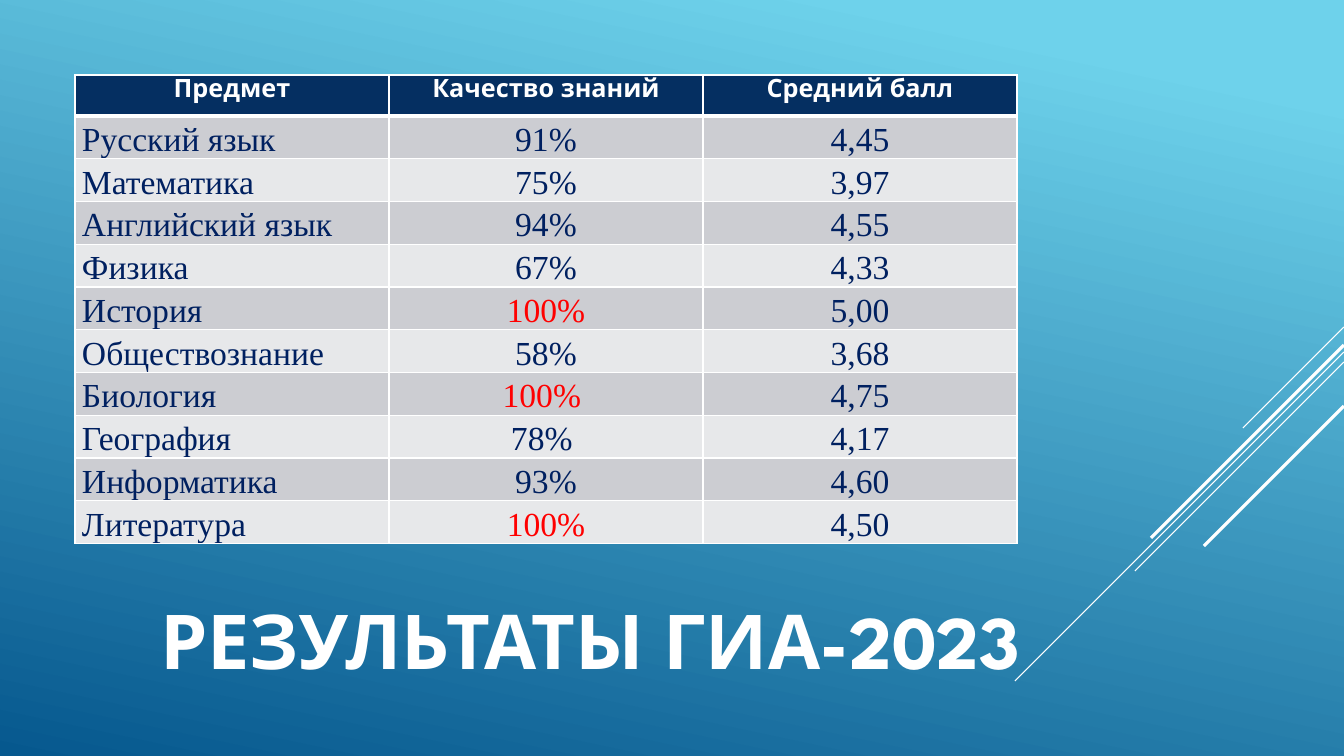
"""Builds the exam results slide: a table of subjects above a large title."""
from dataclasses import dataclass

from lxml import etree
from pptx import Presentation
from pptx.dml.color import RGBColor
from pptx.enum.shapes import MSO_CONNECTOR
from pptx.enum.text import MSO_ANCHOR, MSO_AUTO_SIZE, PP_ALIGN
from pptx.oxml.ns import qn
from pptx.util import Emu, Pt

STRAIGHT = MSO_CONNECTOR.STRAIGHT
MIDDLE = MSO_ANCHOR.MIDDLE
NO_FIT = MSO_AUTO_SIZE.NONE
LEFT, CENTER, JUSTIFY = PP_ALIGN.LEFT, PP_ALIGN.CENTER, PP_ALIGN.JUSTIFY

TITLE = "РЕЗУЛЬТАТЫ ГИА-2023"
HEADINGS = ("Предмет", "Качество знаний", "Средний балл")
RESULTS = [
    ("Русский язык", "91%", "4,45"),
    ("Математика", "75%", "3,97"),
    ("Английский язык", "94%", "4,55"),
    ("Физика", "67%", "4,33"),
    ("История", "100%", "5,00"),
    ("Обществознание", "58%", "3,68"),
    ("Биология", "100% ", "4,75"),
    ("География", "78% ", "4,17"),
    ("Информатика", "93%", "4,60"),
    ("Литература", "100%", "4,50"),
]

SLIDE_SIZE = (1344, 756)
TITLE_BOX = (150, 550, 883, 178)
TABLE_ORIGIN = (75, 75)
COLUMN_WIDTH, ROW_HEIGHT = 314, 41
CELL_INSET = 7
# Each diagonal: height at the right edge, horizontal run, line width.
DIAGONALS = [(327, 101, 0.75), (352, 329, 0.75), (362, 209, 0.75),
             (345, 193, 2.25), (406, 140, 2.25)]


@dataclass(frozen=True)
class Theme:
    white: str = "FFFFFF"
    sky: str = "6ED2EB"
    deep: str = "06588E"
    header: str = "052F61"
    bands: tuple = ("CCCDD2", "E7E8EA")
    ink: str = "002060"
    top_mark: str = "FF0000"
    display_font: str = "League Spartan"
    body_font: str = "Times New Roman"
    title_size: int = 54
    header_size: int = 18
    body_size: int = 24


THEME = Theme()


def px(length):
    return Emu(round(length * 12192000 / SLIDE_SIZE[0]))


def rgb(color):
    return RGBColor.from_string(color)


def write(frame, text, font, size, color, align, bold=False):
    para = frame.paragraphs[0]
    para.alignment = align
    span = para.add_run()
    span.text = text
    span.font.name = font
    span.font.size = Pt(size)
    span.font.bold = bold
    span.font.color.rgb = rgb(color)
    return para


def set_borders(cell, widths):
    properties = cell._tc.get_or_add_tcPr()
    for side, width in zip("LRTB", widths):
        line = etree.SubElement(properties, qn(f"a:ln{side}"), w=str(Pt(width)))
        fill = etree.SubElement(line, qn("a:solidFill"))
        etree.SubElement(fill, qn("a:srgbClr"), val=THEME.white)


def paint_background(page):
    fill = page.background.fill
    fill.gradient()
    fill.gradient_angle = 258
    stops = ((0.1, THEME.sky), (1, THEME.deep))
    for stop, (position, color) in zip(fill.gradient_stops, stops):
        stop.position = position
        stop.color.rgb = rgb(color)


def add_diagonals(page):
    right = SLIDE_SIZE[0]
    for top, run, width in DIAGONALS:
        line = page.shapes.add_connector(
            STRAIGHT, px(right), px(top), px(right - run), px(top + run))
        line.line.color.rgb = rgb(THEME.white)
        line.line.width = Pt(width)
        etree.SubElement(line._element.spPr, qn("a:effectLst"))


def place_title(page):
    title = page.shapes.title
    title.left, title.top, title.width, title.height = map(px, TITLE_BOX)
    frame = title.text_frame
    frame.word_wrap = True
    frame.auto_size = NO_FIT
    frame.vertical_anchor = MIDDLE
    write(frame, TITLE, THEME.display_font, THEME.title_size, THEME.white, LEFT, True)


def fill_header(cell, text):
    set_borders(cell, (1, 1, 1, 3))
    cell.fill.solid()
    cell.fill.fore_color.rgb = rgb(THEME.header)
    write(cell.text_frame, text, THEME.display_font, THEME.header_size,
          THEME.white, CENTER, True)


def fill_result(cell, text, row, column):
    set_borders(cell, (1, 1, 3 if row == 0 else 1, 1))
    cell.fill.solid()
    cell.fill.fore_color.rgb = rgb(THEME.bands[row % 2])
    cell.margin_left = cell.margin_right = px(CELL_INSET)
    cell.margin_top = cell.margin_bottom = 0
    color = THEME.top_mark if text.strip() == "100%" else THEME.ink
    para = write(cell.text_frame, text, THEME.body_font, THEME.body_size,
                 color, CENTER if column else JUSTIFY)
    para.line_spacing = 1.15


def add_results(page):
    rows, columns = len(RESULTS) + 1, len(HEADINGS)
    table = page.shapes.add_table(
        rows, columns, *map(px, TABLE_ORIGIN),
        px(columns * COLUMN_WIDTH), px(rows * ROW_HEIGHT)).table
    for column in table.columns:
        column.width = px(COLUMN_WIDTH)
    for row in table.rows:
        row.height = px(ROW_HEIGHT)
    for column, heading in enumerate(HEADINGS):
        fill_header(table.cell(0, column), heading)
    for row, result in enumerate(RESULTS):
        for column, text in enumerate(result):
            fill_result(table.cell(row + 1, column), text, row, column)


def main():
    deck = Presentation()
    deck.slide_width, deck.slide_height = map(px, SLIDE_SIZE)
    page = deck.slides.add_slide(deck.slide_layouts[5])
    paint_background(page)
    add_diagonals(page)
    place_title(page)
    add_results(page)
    deck.save("out.pptx")


if __name__ == "__main__":
    main()
